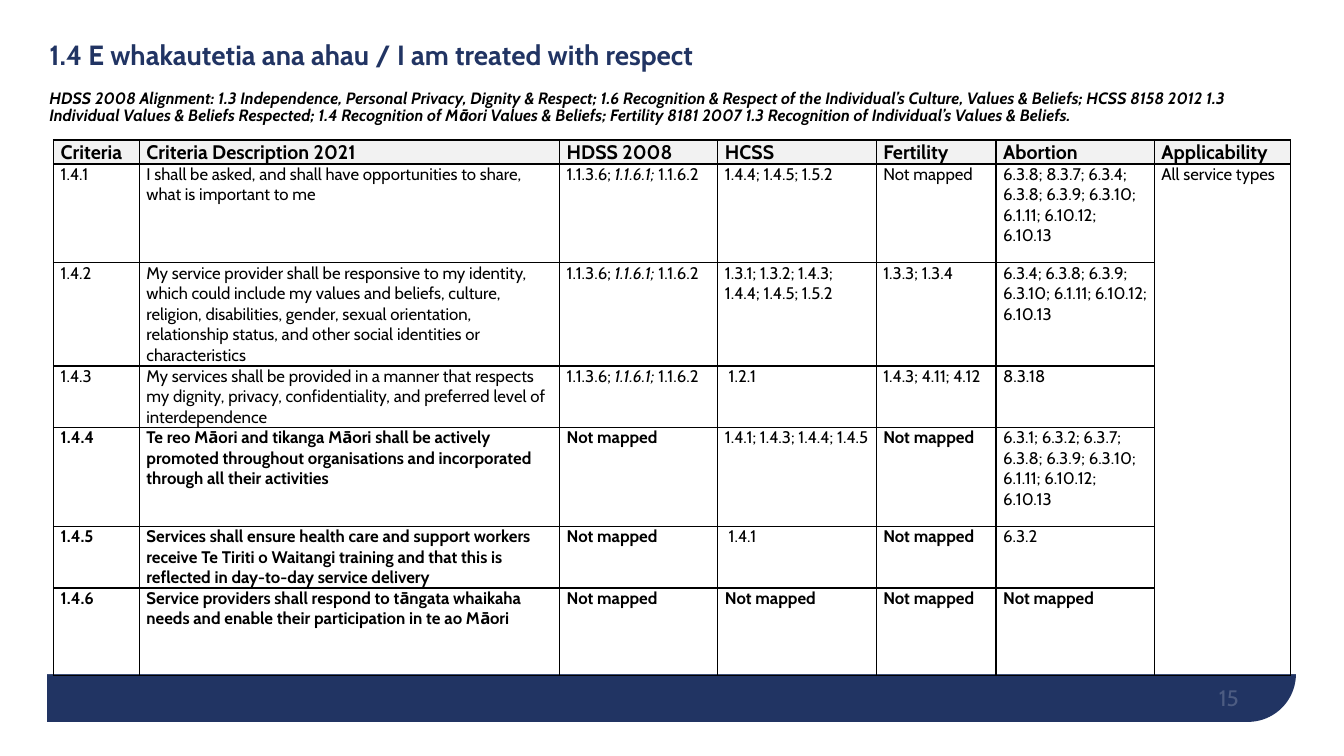
from lxml.etree import SubElement
from pptx import Presentation
from pptx.dml.color import RGBColor
from pptx.enum.shapes import MSO_SHAPE as Shape
from pptx.enum.text import MSO_ANCHOR as Anchor, MSO_AUTO_SIZE as AutoSize, PP_ALIGN as Align
from pptx.oxml.ns import qn
from pptx.util import Cm, Pt

COLORS = {"navy": "213463", "white": "FFFFFF", "black": "000000", "header": "F2F2F2"}
FONT = "Cabin"

HEADING = "1.4 E whakautetia ana ahau / I am treated with respect"
ALIGNMENT = (
    "HDSS 2008 Alignment: 1.3 Independence, Personal Privacy, Dignity & Respect; "
    "1.6 Recognition & Respect of the Individual’s Culture, Values & Beliefs; "
    "HCSS 8158 2012 1.3 Individual Values & Beliefs Respected; "
    "1.4 Recognition of Māori Values & Beliefs; "
    "Fertility 8181 2007 1.3 Recognition of Individual’s Values & Beliefs."
)

COLUMNS = {
    "Criteria": 2.16, "Criteria Description 2021": 10.59, "HDSS 2008": 3.99,
    "HCSS": 3.99, "Fertility": 3.02, "Abortion": 3.99, "Applicability": 3.43,
}
ROW_HEIGHTS = [0.59, 2.49, 2.6, 1.55, 2.49, 1.55, 2.21]
UNMAPPED = "Not mapped"
HDSS_CODES = ("1.1.3.6;", " 1.1.6.1;", " 1.1.6.2")
ITALIC_CODE = HDSS_CODES[1]
FIRST_NEW_ROW = 4
CRITERIA = [
    ["1.4.1",
     "I shall be asked, and shall have opportunities to share, what is important to me",
     HDSS_CODES, "1.4.4; 1.4.5; 1.5.2", UNMAPPED,
     "6.3.8; 8.3.7; 6.3.4; 6.3.8; 6.3.9; 6.3.10; 6.1.11; 6.10.12; 6.10.13",
     "All service types"],
    ["1.4.2",
     "My service provider shall be responsive to my identity, which could include my values "
     "and beliefs, culture, religion, disabilities, gender, sexual orientation, relationship "
     "status, and other social identities or characteristics",
     HDSS_CODES, "1.3.1; 1.3.2; 1.4.3; 1.4.4; 1.4.5; 1.5.2", "1.3.3; 1.3.4",
     "6.3.4; 6.3.8; 6.3.9; 6.3.10; 6.1.11; 6.10.12; 6.10.13"],
    ["1.4.3",
     "My services shall be provided in a manner that respects my dignity, privacy, "
     "confidentiality, and preferred level of interdependence",
     HDSS_CODES, " 1.2.1", "1.4.3; 4.11; 4.12", "8.3.18"],
    ["1.4.4",
     "Te reo Māori and tikanga Māori shall be actively promoted throughout organisations "
     "and incorporated through all their activities",
     UNMAPPED, "1.4.1; 1.4.3; 1.4.4; 1.4.5", UNMAPPED,
     "6.3.1; 6.3.2; 6.3.7; 6.3.8; 6.3.9; 6.3.10; 6.1.11; 6.10.12; 6.10.13"],
    ["1.4.5",
     "Services shall ensure health care and support workers receive Te Tiriti o Waitangi "
     "training and that this is reflected in day-to-day service delivery",
     UNMAPPED, " 1.4.1", UNMAPPED, "6.3.2"],
    ["1.4.6",
     "Service providers shall respond to tāngata whaikaha needs and enable their "
     "participation in te ao Māori",
     UNMAPPED, UNMAPPED, UNMAPPED, UNMAPPED],
]


def rgb(name):
    return RGBColor.from_string(COLORS[name])


def write(paragraph, text, size=12, color="black", bold=False, italic=False, opacity=None):
    run = paragraph.add_run()
    run.text = text
    font = run.font
    font.name, font.size, font.bold, font.italic = FONT, Pt(size), bold, italic
    font.color.rgb = rgb(color)
    if opacity is not None:
        srgb = font.fill._xPr.find(qn("a:solidFill")).find(qn("a:srgbClr"))
        SubElement(srgb, qn("a:alpha"), val=str(opacity * 1000))


class CriteriaSlide:
    def __init__(self, presentation):
        self.slide = presentation.slides.add_slide(presentation.slide_layouts[5])
        self.shapes = self.slide.shapes

    def block(self, kind, left, top, width, height, color):
        block = self.shapes.add_shape(kind, Cm(left), Cm(top), Cm(width), Cm(height))
        block.shadow.inherit = False
        block.fill.solid()
        block.fill.fore_color.rgb = rgb(color)
        block.line.fill.background()
        return block

    def footer_band(self):
        """Navy panel with its lower right corner rounded; white covers all but its foot."""
        panel = self.block(Shape.ROUND_1_RECTANGLE, 1.19, 0.94, 31.47, 17.25, "navy")
        panel.adjustments[0] = 0.07
        panel.rotation = 180
        panel._element.spPr.xfrm.set("flipH", "1")
        self.block(Shape.RECTANGLE, 0, 0, 33.87, 16.99, "white")

    def page_number(self, number):
        frame = self.shapes.add_textbox(Cm(23.6), Cm(16.89), Cm(7.62), Cm(1.02)).text_frame
        frame.word_wrap = True
        frame.margin_left = frame.margin_right = frame.margin_top = frame.margin_bottom = 0
        frame.vertical_anchor = Anchor.BOTTOM
        frame.paragraphs[0].alignment = Align.RIGHT
        write(frame.paragraphs[0], number, size=16, color="white", opacity=20)

    def title(self, heading, alignment):
        title = self.shapes.title
        title.left, title.top, title.width, title.height = Cm(0.99), Cm(1.5), Cm(30.56), Cm(1.22)
        self.shapes._spTree.append(title._element)  # in front of the white cover
        frame = title.text_frame
        frame.word_wrap = True
        frame.auto_size = AutoSize.NONE
        frame.vertical_anchor = Anchor.MIDDLE
        first, second = frame.paragraphs[0], frame.add_paragraph()
        for paragraph in (first, second):
            paragraph.alignment = Align.LEFT
            paragraph.line_spacing = 0.9
        second.space_before = Pt(13)
        write(first, heading, size=19.8, color="navy", bold=True)
        write(second, alignment, size=11.7, bold=True, italic=True)

    def cell_style(self, cell, is_header):
        cell.margin_left = cell.margin_right = Cm(0.18)
        cell.margin_top = cell.margin_bottom = 0
        cell.vertical_anchor = Anchor.MIDDLE if is_header else Anchor.TOP
        properties = cell._tc.get_or_add_tcPr()
        for side in ("lnL", "lnR", "lnT", "lnB"):
            border = SubElement(properties, qn("a:" + side), w=str(Pt(1)))
            fill = SubElement(border, qn("a:solidFill"))
            SubElement(fill, qn("a:srgbClr"), val=COLORS["black"])
        if is_header:
            cell.fill.solid()
            cell.fill.fore_color.rgb = rgb("header")
        else:
            cell.fill.background()

    def criteria_table(self):
        rows = [list(COLUMNS)] + CRITERIA
        table = self.shapes.add_table(
            len(rows), len(COLUMNS), Cm(1.35), Cm(3.53),
            Cm(sum(COLUMNS.values())), Cm(sum(ROW_HEIGHTS))).table
        table.first_row = table.horz_banding = False
        for column, width in zip(table.columns, COLUMNS.values()):
            column.width = Cm(width)
        for row, height in zip(table.rows, ROW_HEIGHTS):
            row.height = Cm(height)
        last = len(COLUMNS) - 1
        table.cell(1, last).merge(table.cell(len(rows) - 1, last))
        for r, entries in enumerate(rows):
            for c in range(len(COLUMNS)):
                self.cell_style(table.cell(r, c), is_header=r == 0)
            for c, entry in enumerate(entries):
                parts = (entry,) if isinstance(entry, str) else entry
                is_code = c > 0 and parts[0].strip()[0].isdigit()
                bold = r == 0 or (r >= FIRST_NEW_ROW and not is_code)
                for part in parts:
                    write(table.cell(r, c).text_frame.paragraphs[0], part,
                          size=14 if r == 0 else 12, bold=bold, italic=part == ITALIC_CODE)


def main():
    presentation = Presentation()
    presentation.slide_width, presentation.slide_height = Cm(33.87), Cm(19.05)
    page = CriteriaSlide(presentation)
    page.footer_band()
    page.page_number("15")
    page.title(HEADING, ALIGNMENT)
    page.criteria_table()
    presentation.save("out.pptx")


if __name__ == "__main__":
    main()
